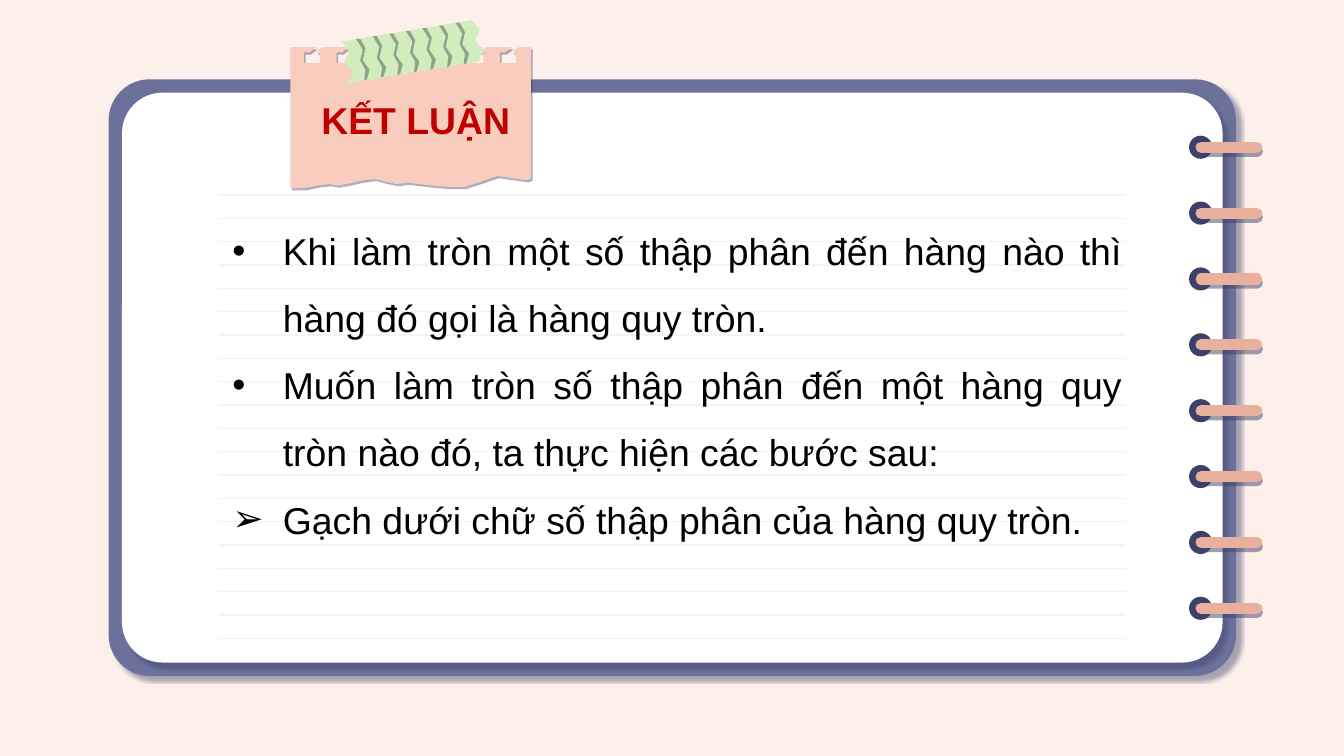
import math

import lxml.etree
import pptx
import pptx.dml.color
import pptx.enum.shapes
import pptx.enum.text
import pptx.oxml.ns
import pptx.util

Pt = pptx.util.Pt
RGBColor = pptx.dml.color.RGBColor
Shape = pptx.enum.shapes.MSO_SHAPE
Align = pptx.enum.text.PP_ALIGN
qn = pptx.oxml.ns.qn

CREAM = RGBColor(0xFD, 0xEF, 0xEA)
WHITE = RGBColor(0xFF, 0xFF, 0xFF)
BLACK = RGBColor(0x00, 0x00, 0x00)
INDIGO = RGBColor(0x6B, 0x71, 0x9B)
NAVY = RGBColor(0x3C, 0x41, 0x69)
SALMON = RGBColor(0xE9, 0xB0, 0x9D)
PEACH = RGBColor(0xF9, 0xCD, 0xBE)
RED = RGBColor(0xC0, 0x00, 0x00)
MINT = RGBColor(0xD1, 0xED, 0xBE)
SAGE = RGBColor(0x92, 0xA1, 0x89)

FONT = "Arial"
TAPE_ROTATION = 328.9

TORN_EDGE = [(0, 75.6), (7.9, 75.6), (14.4, 74.2), (20.9, 73.4), (25.2, 74.2),
             (30.2, 73.4), (38.2, 71.6), (45.4, 70.6), (50.4, 72), (56.9, 73.4),
             (62.6, 72.7), (69.1, 73.4), (75.6, 74.2), (84.2, 74.9), (93.6, 74.9),
             (101.5, 72.3), (110.9, 69.1), (118.8, 70.2), (126.7, 71.3), (128.9, 70.6)]
NOTCH = [(0, 0), (-3.6, 2.9), (-1.4, 2.9), (-1.4, 8.6),
         (-10.1, 8.6), (-10.1, 2.9), (-7.2, 2.9), (-3.6, 0)]
TAPE = [(0, 11.5), (4.3, 16.6), (1.4, 22.3), (6.5, 28.1), (3.6, 33.8),
        (73.4, 22.3), (76.3, 15.8), (71.3, 10.8), (74.2, 5), (69.8, 0)]
STRIPE = [(0, 0), (3.6, 5.8), (2.2, 11.5), (5, 16.6), (4.3, 22.3),
          (5.8, 21.6), (7.2, 16.6), (3.6, 11.5), (5, 5), (2.2, 0)]

BULLETS = [
    ("•", "Khi làm tròn một số thập phân đến hàng nào thì hàng đó gọi là hàng quy tròn."),
    ("•", "Muốn làm tròn số thập phân đến một hàng quy tròn nào đó, ta thực hiện các bước sau:"),
    ("➢", "Gạch dưới chữ số thập phân của hàng quy tròn."),
]


def add_child(parent, tag, **attributes):
    child = lxml.etree.SubElement(parent, qn(tag))
    for name, value in attributes.items():
        child.set(name, str(value))
    return child


def set_shadow(effects, alpha, blur, distance, angle):
    """Fill an effect list with an outer shadow; alpha in percent, angle in degrees."""
    shadow = add_child(effects, "a:outerShdw", blurRad=Pt(blur), dist=Pt(distance),
                       dir=angle * 60000, algn="bl", rotWithShape=0)
    color = add_child(shadow, "a:srgbClr", val=NAVY)
    add_child(color, "a:alpha", val=alpha * 1000)


def paint(shape, color, shadow=None):
    shape.fill.solid()
    shape.fill.fore_color.rgb = color
    shape.line.fill.background()
    shape.shadow.inherit = False
    if shadow:
        set_shadow(shape._element.spPr.find(qn("a:effectLst")), *shadow)


def add_line(page, x1, y1, x2, y2, color, width):
    """Draw a straight line and return it with its empty effect list."""
    line = page.shapes.add_connector(pptx.enum.shapes.MSO_CONNECTOR.STRAIGHT,
                                     Pt(x1), Pt(y1), Pt(x2), Pt(y2))
    line.line.color.rgb = color
    line.line.width = Pt(width)
    return line, add_child(line._element.spPr, "a:effectLst")


def turn(point, degrees):
    x, y = point
    angle = math.radians(degrees)
    return (x * math.cos(angle) - y * math.sin(angle),
            x * math.sin(angle) + y * math.cos(angle))


def add_outline(page, left, top, points, color, rotation=0, shadow=None):
    """Draw a closed outline; points are given as seen once the rotation is applied."""
    flat = [turn((left + x, top + y), -rotation) for x, y in points]
    center = [(min(values) + max(values)) / 2 for values in zip(*flat)]
    seen = turn(center, rotation)
    placed = [(Pt(x - center[0] + seen[0]), Pt(y - center[1] + seen[1])) for x, y in flat]
    builder = page.shapes.build_freeform(*placed[0])
    builder.add_line_segments(placed[1:], close=True)
    shape = builder.convert_to_shape()
    shape.rotation = rotation
    paint(shape, color, shadow)


def add_board(page, left, top, width, height):
    frame = 7.2
    for inset, color, corner in ((0, INDIGO, 0.069), (frame, WHITE, 0.071)):
        board = page.shapes.add_shape(
            Shape.ROUNDED_RECTANGLE, Pt(left + inset), Pt(top + inset),
            Pt(width - 2 * inset), Pt(height - 2 * inset))
        board.adjustments[0] = corner
        paint(board, color, (44, 1.1, 4.5, 44))


def add_ruled_lines(page, left, top, width, height, count=20):
    for index in range(count):
        y = top + index * height / (count - 1)
        add_line(page, left, y, left + width, y, CREAM, 0.75)


def add_rings(page, left, top, width, height, count=8):
    hole = 12.4
    pitch = (height - hole) / (count - 1)
    for index in range(count):
        y = top + index * pitch
        paint(page.shapes.add_shape(Shape.OVAL, Pt(left), Pt(y), Pt(hole), Pt(hole)), NAVY)
        middle = y + hole / 2
        wire, effects = add_line(page, left + width, middle, left + 6.5, middle, SALMON, 6)
        wire.line._ln.set("cap", "rnd")
        set_shadow(effects, 50, 0, 2.2, 80)


def add_text_box(page, left, top, width, height):
    box = page.shapes.add_textbox(Pt(left), Pt(top), Pt(width), Pt(height))
    box.text_frame.word_wrap = True
    return box.text_frame


def write(para, text, color, alignment, bold=False):
    para.text = text
    para.alignment = alignment
    para.font.name = FONT
    para.font.size = Pt(20)
    para.font.bold = bold
    para.font.color.rgb = color


def add_note(page, left, top):
    notches = [(122.4 - 17.5 * index + x, y) for index in range(7) for x, y in NOTCH]
    outline = [(0, 0), *TORN_EDGE, (128.9, 0), *notches]
    add_outline(page, left, top, outline, PEACH, shadow=(42, 0, 1.5, 54))

    frame = add_text_box(page, left - 3.6, top + 19.4, 141.8, 38.9)
    frame.vertical_anchor = pptx.enum.text.MSO_ANCHOR.MIDDLE
    frame.margin_top = frame.margin_bottom = Pt(7.2)
    write(frame.paragraphs[0], "KẾT LUẬN", RED, Align.CENTER, bold=True)


def add_tape(page, left, top):
    add_outline(page, left, top, TAPE, MINT, TAPE_ROTATION)
    for index in range(7):
        add_outline(page, left + 7.9 + 8.88 * index, top + 10.1 - 1.44 * index,
                    STRIPE, SAGE, TAPE_ROTATION)


def add_bullets(page, left, top, width, height):
    frame = add_text_box(page, left, top, width, height)
    frame.auto_size = pptx.enum.text.MSO_AUTO_SIZE.SHAPE_TO_FIT_TEXT
    for index, (mark, text) in enumerate(BULLETS):
        para = frame.add_paragraph() if index else frame.paragraphs[0]
        para.line_spacing = 1.5
        properties = para._p.get_or_add_pPr()
        properties.set("marL", str(Pt(27)))
        properties.set("indent", str(-Pt(27)))
        add_child(add_child(properties, "a:buClr"), "a:srgbClr", val=BLACK)
        add_child(properties, "a:buFont", typeface=FONT)
        add_child(properties, "a:buChar", char=mark)
        write(para, text, BLACK, Align.JUSTIFY)


def main():
    deck = pptx.Presentation()
    deck.slide_width, deck.slide_height = Pt(720), Pt(405)
    page = deck.slides.add_slide(deck.slide_layouts[6])
    page.background.fill.solid()
    page.background.fill.fore_color.rgb = CREAM
    add_board(page, 58.2, 42.5, 604, 319.7)
    add_ruled_lines(page, 116.6, 104.4, 486.8, 237.6)
    add_rings(page, 637, 72.7, 36.2, 259.4)
    add_note(page, 155.5, 25.2)
    add_tape(page, 182.9, 10.8)
    add_bullets(page, 117.4, 106.6, 491, 189.4)
    deck.save("out.pptx")


if __name__ == "__main__":
    main()
